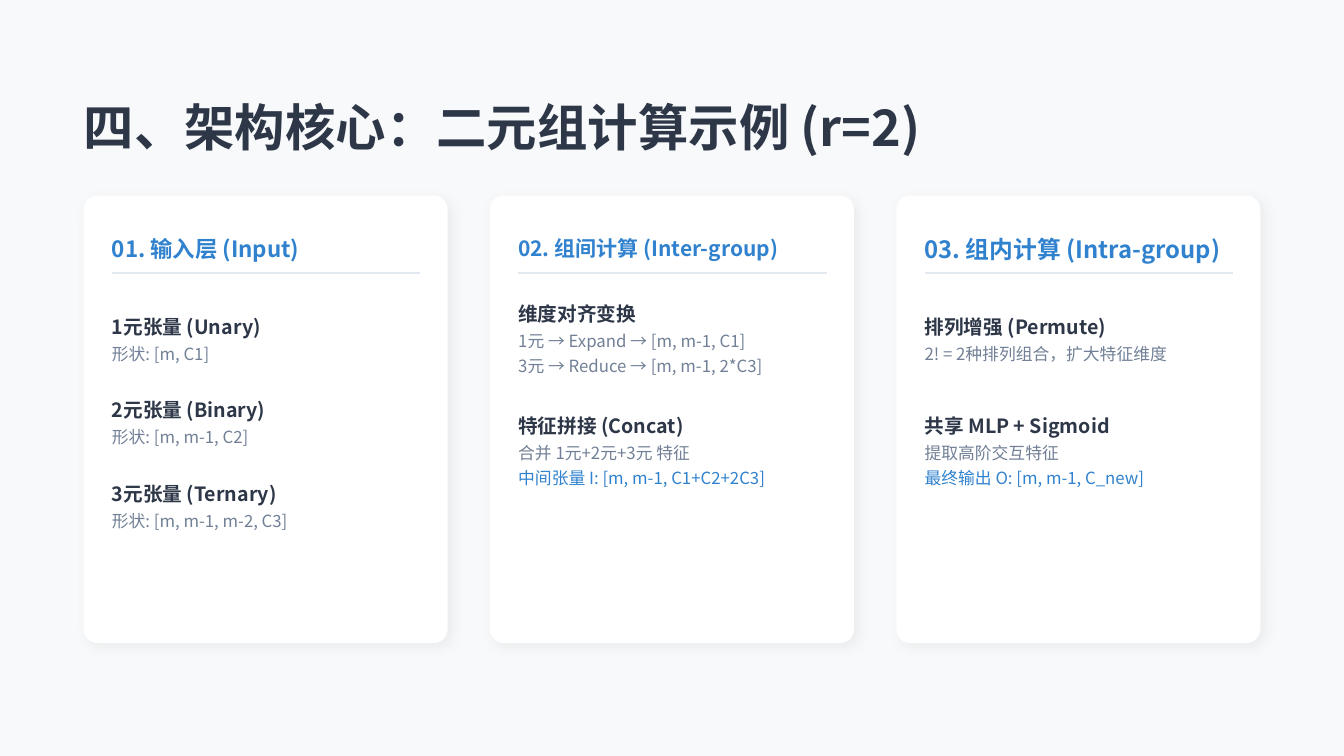
from dataclasses import dataclass

from lxml import etree
from pptx import Presentation
from pptx import util as u
from pptx.dml import color
from pptx.enum import shapes, text
from pptx.oxml import ns


@dataclass(frozen=True)
class Theme:
    font: str = "Noto Sans CJK SC"
    page: str = "F8F9FA"
    card: str = "FFFFFF"
    rule: str = "E2E8F0"
    dark: str = "2D3748"
    grey: str = "718096"
    blue: str = "3182CE"
    title_size: int = 36
    topic_size: int = 14
    detail_size: int = 12
    spacing: float = 1.25


@dataclass(frozen=True)
class Line:
    text: str
    size: int
    colour: str
    bold: bool = False


@dataclass(frozen=True)
class Block:
    top: float
    height: float
    lines: list[Line]


@dataclass(frozen=True)
class Card:
    heading: Line
    blocks: list[Block]


T = Theme()
MARGIN, CARD_TOP, CARD_W, CARD_H = 0.83, 1.94, 3.61, 4.44
PITCH, PAD, INNER_W = 4.03, 0.28, 3.06
FIRST_TOP, INPUT_STEP, SECOND_TOP = 2.92, 0.83, 3.89
SHORT, TALL = 0.83, 1.11


def rgb(value: str) -> color.RGBColor:
    return color.RGBColor.from_string(value)


def heading(words: str, size: int) -> Line:
    return Line(words, size, T.blue, True)


def block(top: float, height: float, topic: str, *details: str, result: str = "") -> Block:
    lines = [Line(topic, T.topic_size, T.dark, True)]
    lines += [Line(d, T.detail_size, T.grey) for d in details]
    if result:
        lines.append(Line(result, T.detail_size, T.blue))
    return Block(top, height, lines)


def add_text(s, left: float, top: float, width: float, height: float, lines: list[Line]) -> None:
    tf = s.shapes.add_textbox(*map(u.Inches, (left, top, width, height))).text_frame
    frame = {"word_wrap": True, "vertical_anchor": text.MSO_ANCHOR.MIDDLE,
             "margin_left": 0, "margin_top": 0, "margin_right": 0, "margin_bottom": 0}
    for name, value in frame.items():
        setattr(tf, name, value)
    for i, line in enumerate(lines):
        p = tf.add_paragraph() if i else tf.paragraphs[0]
        p.line_spacing = T.spacing
        r = p.add_run()
        r.text = line.text
        for name, value in {"name": T.font, "size": u.Pt(line.size), "bold": line.bold}.items():
            setattr(r.font, name, value)
        r.font.color.rgb = rgb(line.colour)
        # East Asian glyphs take their own font entry
        etree.SubElement(r.font._element, ns.qn("a:ea"), typeface=T.font)


def add_panel(s, left: float) -> None:
    sp = s.shapes.add_shape(shapes.MSO_SHAPE.ROUNDED_RECTANGLE,
                            *map(u.Inches, (left, CARD_TOP, CARD_W, CARD_H)))
    sp.adjustments[0] = 0.038
    sp.fill.solid()
    sp.fill.fore_color.rgb = rgb(T.card)
    sp.line.fill.background()
    # Soft shadow down and to the right
    sp.shadow.inherit = False
    effects = sp._element.spPr.find(ns.qn("a:effectLst"))
    shadow = etree.SubElement(effects, ns.qn("a:outerShdw"), blurRad=str(u.Pt(10)),
                              dist=str(u.Pt(4)), dir=str(45 * 60000),
                              algn="tl", rotWithShape="0")
    black = etree.SubElement(shadow, ns.qn("a:srgbClr"), val="000000")
    etree.SubElement(black, ns.qn("a:alpha"), val="5000")


def add_rule(s, left: float, y: float) -> None:
    cx = s.shapes.add_connector(shapes.MSO_CONNECTOR.STRAIGHT,
                                *map(u.Inches, (left, y, left + INNER_W, y)))
    cx.line.color.rgb = rgb(T.rule)
    cx.line.width = u.Pt(1)
    etree.SubElement(cx._element.spPr, ns.qn("a:effectLst"))


def add_card(s, left: float, card: Card) -> None:
    inner = left + PAD
    add_panel(s, left)
    add_text(s, inner, 2.22, INNER_W, 0.42, [card.heading])
    add_rule(s, inner, 2.71)
    for b in card.blocks:
        add_text(s, inner, b.top, INNER_W, b.height, b.lines)


# Card contents
TENSORS = [("1元张量 (Unary)", "形状: [m, C1]"),
           ("2元张量 (Binary)", "形状: [m, m-1, C2]"),
           ("3元张量 (Ternary)", "形状: [m, m-1, m-2, C3]")]
CARDS = [
    Card(heading("01. 输入层 (Input)", 16),
         [block(FIRST_TOP + i * INPUT_STEP, SHORT, *t) for i, t in enumerate(TENSORS)]),
    Card(heading("02. 组间计算 (Inter-group)", 15), [
        block(FIRST_TOP, SHORT, "维度对齐变换",
              "1元 → Expand → [m, m-1, C1]", "3元 → Reduce → [m, m-1, 2*C3]"),
        block(SECOND_TOP, TALL, "特征拼接 (Concat)", "合并 1元+2元+3元 特征",
              result="中间张量 I: [m, m-1, C1+C2+2C3]")]),
    Card(heading("03. 组内计算 (Intra-group)", 17), [
        block(FIRST_TOP, SHORT, "排列增强 (Permute)", "2! = 2种排列组合，扩大特征维度"),
        block(SECOND_TOP, TALL, "共享 MLP + Sigmoid", "提取高阶交互特征",
              result="最终输出 O: [m, m-1, C_new]")]),
]


def main() -> None:
    prs = Presentation()
    prs.slide_width, prs.slide_height = u.Inches(13.33), u.Inches(7.5)
    s = prs.slides.add_slide(prs.slide_layouts[6])
    s.background.fill.solid()
    s.background.fill.fore_color.rgb = rgb(T.page)

    # Title
    add_text(s, MARGIN, 0.83, 11.67, 0.69,
             [Line("四、架构核心：二元组计算示例 (r=2)", T.title_size, T.dark, True)])

    # Three equal cards
    for i, card in enumerate(CARDS):
        add_card(s, MARGIN + i * PITCH, card)
    prs.save("out.pptx")


if __name__ == "__main__":
    main()
